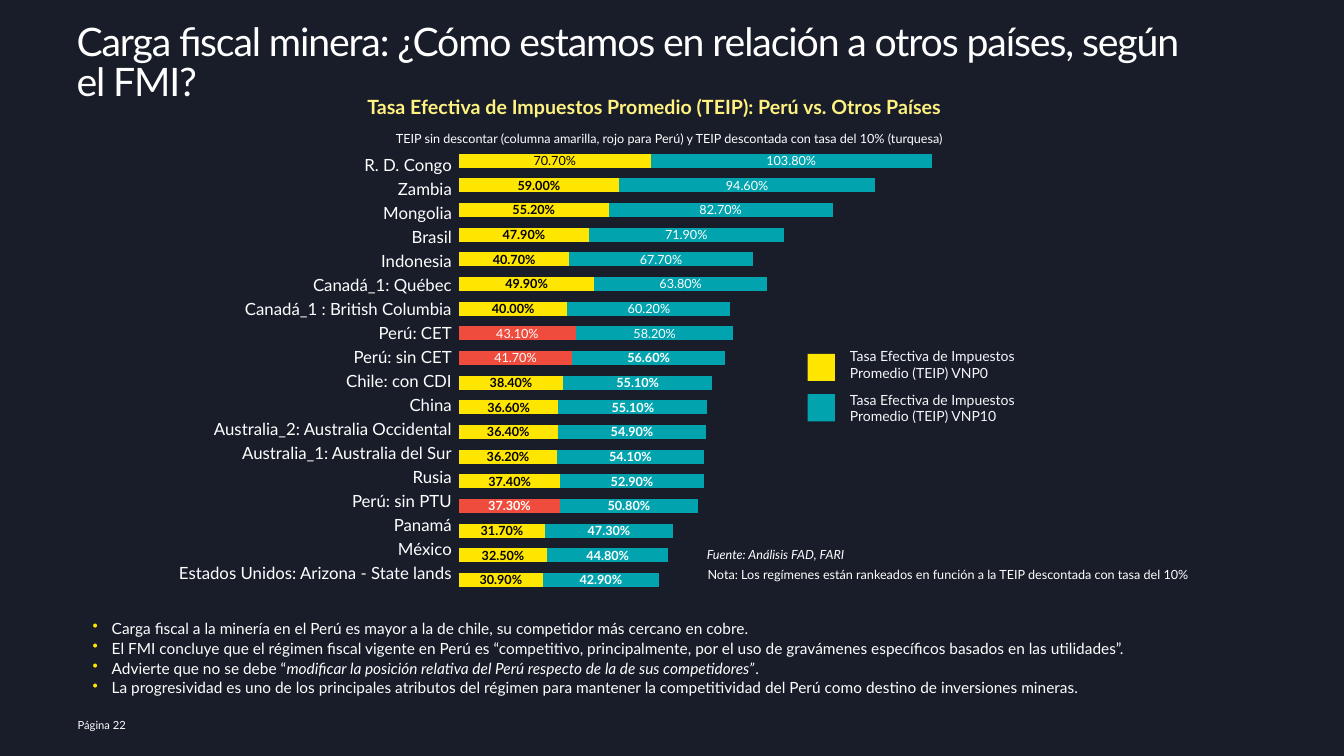
from lxml.etree import SubElement
from pptx import Presentation
from pptx.chart.data import CategoryChartData
from pptx.dml.color import RGBColor
from pptx.enum.chart import XL_CHART_TYPE, XL_LABEL_POSITION
from pptx.enum.shapes import MSO_SHAPE
from pptx.enum.text import PP_ALIGN
from pptx.oxml import parse_xml
from pptx.oxml.ns import nsdecls, qn
from pptx.util import Inches, Pt

WIDE, HIGH = 13.33, 7.5
WHITE, BLACK, NIGHT = "FFFFFF", "000000", "181D29"
YELLOW, TEAL, RED = "FFE600", "00A3AE", "F04C3E"

ROWS = [
    ("R. D. Congo", 13.43, 0.707, 1.038),
    ("Zambia", 13.43, 0.59, 0.946),
    ("Mongolia", 13.43, 0.552, 0.827),
    ("Brasil", 13.43, 0.479, 0.719),
    ("Indonesia", 13.43, 0.407, 0.677),
    ("Canadá_1: Québec", 13.43, 0.499, 0.638),
    ("Canadá_1 : British Columbia", 19.43, 0.4, 0.602),
    ("Perú: CET", 8.03, 0.431, 0.582),
    ("Perú: sin CET", 11.93, 0.417, 0.566),
    ("Chile: con CDI", 11.93, 0.384, 0.551),
    ("China", 11.93, 0.366, 0.551),
    ("Australia_2: Australia Occidental", 22.73, 0.364, 0.549),
    ("Australia_1: Australia del Sur", 20.18, 0.362, 0.541),
    ("Rusia", 6.9, 0.374, 0.529),
    ("Perú: sin PTU", 10.43, 0.373, 0.508),
    ("Panamá", 10.43, 0.317, 0.473),
    ("México", 10.43, 0.325, 0.448),
    ("Estados Unidos: Arizona - State lands", 26.56, 0.309, 0.429),
]

POINTS = [
    "Carga fiscal a la minería en el Perú es mayor a la de chile, su competidor más cercano en cobre.",
    "El FMI concluye que el régimen fiscal vigente en Perú es “competitivo, principalmente, por el uso de "
    "gravámenes específicos basados en las utilidades”.",
    "Advierte que no se debe “|modificar la posición relativa del Perú respecto de la de sus competidores”|.",
    "La progresividad es uno de los principales atributos del régimen para mantener la competitividad del "
    "Perú como destino de inversiones mineras.",
]


def paint(text):
    return RGBColor.from_string(text)


def apply(item, **values):
    for name, value in values.items():
        setattr(item, name, value)


def share(x, y, w, h):
    return [Inches(part * side / 100) for part, side in zip((x, y, w, h), (WIDE, HIGH) * 2)]


def ink(font, size, color=WHITE, **more):
    apply(font, name="Lato", size=Pt(size), **more)
    font.color.rgb = paint(color)


def fill(item, color):
    item.fill.solid()
    item.fill.fore_color.rgb = paint(color)


def add_dot(para):
    props = para._p.get_or_add_pPr()
    indent = Inches(0.19)
    props.set("marL", str(indent))
    props.set("indent", str(-indent))
    tint = SubElement(props, qn("a:buClr"))
    SubElement(tint, qn("a:srgbClr")).set("val", YELLOW)
    SubElement(props, qn("a:buChar")).set("char", "•")


def write(slide, box, lines, size, color=WHITE, inset=None, wrap=True,
          dots=False, track=None, para={}, font={}):
    frame = slide.shapes.add_textbox(*share(*box)).text_frame
    frame.word_wrap = wrap
    if inset is not None:
        apply(frame, margin_left=0, margin_right=0, margin_bottom=0, margin_top=Inches(inset))
    for spot, line in enumerate(lines):
        item = frame.add_paragraph() if spot else frame.paragraphs[0]
        if dots:
            add_dot(item)
        apply(item, **para)
        for turn, part in enumerate(line.split("|")):
            run = item.add_run()
            run.text = part
            ink(run.font, size, color, **font)
            if turn % 2:
                run.font.italic = True
            if track:
                run.font._element.set("spc", str(track))


def add_bars(slide):
    rows = ROWS[::-1]
    data = CategoryChartData(number_format="0.00%")
    data.categories = [str(n + 1) for n in range(len(rows))]
    for spot in (2, 3):
        data.add_series(f"Series {spot - 1}", [row[spot] for row in rows])
    box = share(33.31, 18.4, 42.01, 61.2)
    chart = slide.shapes.add_chart(XL_CHART_TYPE.BAR_STACKED, *box, data).chart
    apply(chart, has_legend=False, has_title=False)
    ink(chart.font, 10, BLACK)
    apply(chart.category_axis, visible=False)
    apply(chart.value_axis, visible=False, has_major_gridlines=False,
          minimum_scale=0, maximum_scale=2)
    plot = chart.plots[0]
    apply(plot, gap_width=79, overlap=100, vary_by_categories=False)
    for bars, color, text in zip(plot.series, (YELLOW, TEAL), (BLACK, WHITE)):
        fill(bars.format, color)
        tags = bars.data_labels
        apply(tags, show_value=True, number_format="0.00%", number_format_is_linked=False,
              position=XL_LABEL_POSITION.CENTER)
        ink(tags.font, 9, text, bold=True)
    first, second = plot.series
    for spot, row in enumerate(rows):
        if row[0].startswith("Perú"):
            fill(first.points[spot].format, RED)
            mark(first, spot, WHITE, "PTU" in row[0])
        if spot >= 10:
            mark(second, spot, WHITE, False)
    mark(first, len(rows) - 1, BLACK, False)
    fit(chart)


def mark(bars, spot, color, bold):
    tag = bars.points[spot].data_label
    ink(tag.font, 9, color, bold=bold)
    tag.position = XL_LABEL_POSITION.CENTER


def fit(chart):
    area = chart.element.find(".//" + qn("c:plotArea"))
    for old in area.findall(qn("c:layout")):
        area.remove(old)
    parts = [("layoutTarget", "inner"), ("xMode", "edge"), ("yMode", "edge"),
             ("x", 0.02), ("y", 0.02), ("w", 0.96), ("h", 0.96)]
    inner = "".join(f'<c:{name} val="{value}"/>' for name, value in parts)
    area.insert(0, parse_xml(
        f'<c:layout {nsdecls("c")}><c:manualLayout>{inner}</c:manualLayout></c:layout>'))


def add_key(slide, spot, color, name):
    box = share(60.09, 46.8 + 5.33 * spot, 2.03, 3.6)
    patch = slide.shapes.add_shape(MSO_SHAPE.RECTANGLE, *box)
    patch.shadow.inherit = False
    fill(patch, color)
    patch.line.fill.background()
    write(slide, (63.24, 46 + 5.73 * spot, 15.9, 4.67),
          [f"Tasa Efectiva de Impuestos Promedio (TEIP) {name}"], 10, "F6F6FA", inset=0)


def main():
    deck = Presentation()
    apply(deck, slide_width=Inches(WIDE), slide_height=Inches(HIGH))
    slide = deck.slides.add_slide(deck.slide_layouts[6])
    fill(slide.background, NIGHT)
    mid, right = {"alignment": PP_ALIGN.CENTER}, {"alignment": PP_ALIGN.RIGHT}

    write(slide, (6.15, 81.2, 93.85, 14.4), POINTS, 11, dots=True, para={"space_after": Pt(1)})
    write(slide, (5.03, 94.4, 6.98, 2.67), ["Página 22"], 8)
    write(slide, (5.7, 3.2, 94.3, 6.27),
          ["Carga fiscal minera: ¿Cómo estamos en relación a otros países, según", "el FMI?"],
          28, inset=0, track=-80, para={"line_spacing": 0.85})
    add_bars(slide)
    for spot, (name, width, *_) in enumerate(ROWS):
        write(slide, (34.36 - width, 19.87 + 3.17 * spot, width, 4), [name], 12, para=right)
    write(slide, (51.91, 74.4, 42.01, 3.33),
          ["Nota: Los regímenes están rankeados en función a la TEIP descontada con tasa del 10%"], 9)
    write(slide, (52.59, 72.13, 11.7, 2.27), ["Fuente: Análisis FAD, FARI"], 9, inset=0.04,
          wrap=False, para={"line_spacing": 0.85, "space_after": Pt(6)}, font={"italic": True})
    for spot, (color, name) in enumerate([(YELLOW, "VNP0"), (TEAL, "VNP10")]):
        add_key(slide, spot, color, name)
    write(slide, (24.61, 11.87, 48.16, 4.53),
          ["Tasa Efectiva de Impuestos Promedio (TEIP): Perú vs. Otros Países"],
          14, "FFF27F", para=mid, font={"bold": True})
    write(slide, (24.68, 16.67, 50.19, 3.33),
          ["TEIP sin descontar (columna amarilla, rojo para Perú) y TEIP descontada "
           "con tasa del 10% (turquesa)"], 9, para=mid)
    deck.save("out.pptx")


if __name__ == "__main__":
    main()
